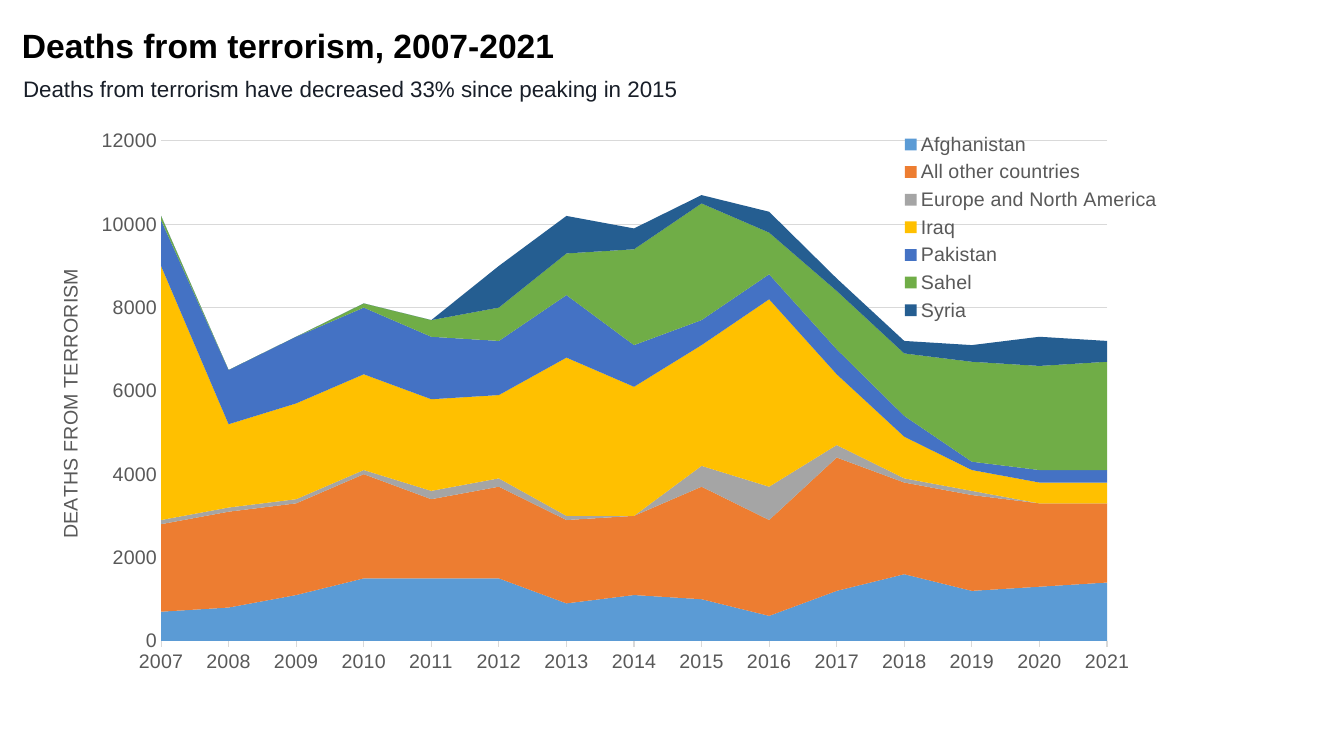
"""Build a slide with a stacked area chart of deaths from terrorism."""
from dataclasses import dataclass
from typing import Any

from lxml import etree
from pptx import Presentation
from pptx.chart.data import CategoryChartData
from pptx.dml.color import RGBColor
from pptx.enum.chart import XL_CHART_TYPE, XL_LEGEND_POSITION, XL_TICK_MARK
from pptx.oxml.ns import qn
from pptx.util import Emu, Pt

AREA_STACKED = XL_CHART_TYPE.AREA_STACKED
LEGEND_BOTTOM = XL_LEGEND_POSITION.BOTTOM
TICK_NONE = XL_TICK_MARK.NONE
TICK_OUTSIDE = XL_TICK_MARK.OUTSIDE

BLACK = RGBColor(0x00, 0x00, 0x00)
INK = RGBColor(0x18, 0x1E, 0x28)
GRAY = RGBColor(0x59, 0x59, 0x59)
LIGHT_GRAY = RGBColor(0xD9, 0xD9, 0xD9)
BLUE = RGBColor(0x5B, 0x9B, 0xD5)
ORANGE = RGBColor(0xED, 0x7D, 0x31)
SILVER = RGBColor(0xA5, 0xA5, 0xA5)
GOLD = RGBColor(0xFF, 0xC0, 0x00)
ROYAL_BLUE = RGBColor(0x44, 0x72, 0xC4)
GREEN = RGBColor(0x70, 0xAD, 0x47)
NAVY = RGBColor(0x25, 0x5E, 0x91)

EMU_PER_PX = 914400 / 100.8
CHART_FONT = {"name": "Arial", "size": Pt(14), "bold": False}


@dataclass(frozen=True)
class Heading:
    """A line of text with its box, in px, and its format."""

    text: str
    box: tuple[int, int, int, int]
    margins: tuple[int, int]
    line_spacing: float
    color: RGBColor
    font: dict[str, Any]


@dataclass(frozen=True)
class Region:
    """The deaths in a region by year, in hundreds."""

    name: str
    color: RGBColor
    hundreds: tuple[int, ...]


HEADINGS = (
    Heading("Deaths from terrorism, 2007-2021", (22, 29, 1088, 40), (0, 0), 0.9,
            BLACK, {"name": "Arial", "size": Pt(24), "bold": True}),
    Heading("Deaths from terrorism have decreased 33% since peaking in 2015",
            (13, 70, 999, 37), (10, 5), 1.0,
            INK, {"name": "Arial", "size": Pt(16), "bold": False}),
)
YEARS = range(2007, 2022)
REGIONS = (
    Region("Afghanistan", BLUE,
           (7, 8, 11, 15, 15, 15, 9, 11, 10, 6, 12, 16, 12, 13, 14)),
    Region("All other countries", ORANGE,
           (21, 23, 22, 25, 19, 22, 20, 19, 27, 23, 32, 22, 23, 20, 19)),
    Region("Europe and North America", SILVER,
           (1, 1, 1, 1, 2, 2, 1, 0, 5, 8, 3, 1, 1, 0, 0)),
    Region("Iraq", GOLD,
           (61, 20, 23, 23, 22, 20, 38, 31, 29, 45, 17, 10, 5, 5, 5)),
    Region("Pakistan", ROYAL_BLUE,
           (11, 13, 16, 16, 15, 13, 15, 10, 6, 6, 6, 5, 2, 3, 3)),
    Region("Sahel", GREEN,
           (1, 0, 0, 1, 4, 8, 10, 23, 28, 10, 14, 15, 24, 25, 26)),
    Region("Syria", NAVY,
           (0, 0, 0, 0, 0, 10, 9, 5, 2, 5, 3, 3, 4, 7, 5)),
)
CHART_BOX = (46, 123, 1139, 607)
PLOT_BOX = (115, 18, 946, 500)
LEGEND_BOX = (854, 5, 262, 199)
AXIS_TITLE_CORNER = (8, 142)


def px(length: int) -> Emu:
    """Turn px into EMU."""
    return Emu(round(length * EMU_PER_PX))


def set_attributes(target: Any, values: dict[str, Any]) -> None:
    """Set each named value on the target."""
    for name, value in values.items():
        setattr(target, name, value)


def style_font(font: Any, color: RGBColor, values: dict[str, Any]) -> None:
    """Apply a colour and format values to a font."""
    set_attributes(font, values)
    font.color.rgb = color


def style_line(line: Any) -> None:
    """Draw a thin light gray line."""
    line.color.rgb = LIGHT_GRAY
    line.width = Pt(0.75)


def place(parent: Any, index: int, box: tuple[int, ...], inner: bool = False) -> None:
    """Give a chart part a manual layout, in px inside the chart."""
    for old_layout in parent.findall(qn("c:layout")):
        parent.remove(old_layout)
    layout = etree.Element(qn("c:layout"))
    parent.insert(index, layout)
    manual = etree.SubElement(layout, qn("c:manualLayout"))
    values = {"layoutTarget": "inner"} if inner else {}
    values |= {"xMode": "edge", "yMode": "edge"}
    for name, length, total in zip("xywh", box, CHART_BOX[2:] * 2):
        values[name] = f"{length / total:.4f}"
    for name, value in values.items():
        etree.SubElement(manual, qn(f"c:{name}"), val=value)


def add_heading(slide: Any, heading: Heading) -> None:
    """Add a heading as a text box."""
    shape = slide.shapes.add_textbox(*map(px, heading.box))
    horizontal, vertical = map(px, heading.margins)
    set_attributes(shape.text_frame, {
        "word_wrap": True, "margin_left": horizontal, "margin_right": horizontal,
        "margin_top": vertical, "margin_bottom": vertical,
    })
    paragraph = shape.text_frame.paragraphs[0]
    paragraph.line_spacing = heading.line_spacing
    run = paragraph.add_run()
    run.text = heading.text
    style_font(run.font, heading.color, heading.font)


def style_axes(chart: Any) -> None:
    """Format both axes and the value axis title."""
    years, deaths = chart.category_axis, chart.value_axis
    for axis, tick in ((years, TICK_OUTSIDE), (deaths, TICK_NONE)):
        set_attributes(axis, {"major_tick_mark": tick, "minor_tick_mark": TICK_NONE})
        style_font(axis.tick_labels.font, GRAY, CHART_FONT)
    style_line(years.format.line)
    deaths.format.line.fill.background()
    set_attributes(deaths, {
        "minimum_scale": 0, "maximum_scale": 12000, "major_unit": 2000,
        "has_major_gridlines": True,
    })
    style_line(deaths.major_gridlines.format.line)
    set_attributes(deaths.tick_labels, {
        "number_format": "0", "number_format_is_linked": False,
    })
    run = deaths.axis_title.text_frame.paragraphs[0].add_run()
    run.text = "DEATHS FROM TERRORISM"
    style_font(run.font, GRAY, CHART_FONT)


def add_deaths_chart(slide: Any) -> None:
    """Add the stacked area chart with its legend."""
    data = CategoryChartData(number_format="0")
    data.categories = [str(year) for year in YEARS]
    for region in REGIONS:
        data.add_series(region.name, [100 * count for count in region.hundreds])
    chart = slide.shapes.add_chart(AREA_STACKED, *map(px, CHART_BOX), data).chart
    style_font(chart.font, BLACK, {"name": "Calibri", "size": Pt(10)})
    set_attributes(chart, {"has_title": False, "has_legend": True})
    chart.plots[0].vary_by_categories = False
    for series, region in zip(chart.plots[0].series, REGIONS):
        series.format.fill.solid()
        series.format.fill.fore_color.rgb = region.color
        series.format.line.fill.background()
    style_axes(chart)
    set_attributes(chart.legend, {"position": LEGEND_BOTTOM, "include_in_layout": True})
    style_font(chart.legend.font, GRAY, CHART_FONT)

    root = chart.element if hasattr(chart, "element") else chart._chartSpace
    root.find(f".//{qn('c:valAx')}/{qn('c:crossBetween')}").set("val", "midCat")
    title = root.find(f".//{qn('c:valAx')}/{qn('c:title')}")
    body = title.find(f".//{qn('a:bodyPr')}")
    body.set("rot", "-5400000")
    body.set("vert", "horz")
    place(root.find(f".//{qn('c:plotArea')}"), 0, PLOT_BOX, inner=True)
    place(root.find(f".//{qn('c:legend')}"), 1, LEGEND_BOX)
    place(title, 1, AXIS_TITLE_CORNER)


def main() -> None:
    """Build and save the presentation."""
    presentation = Presentation()
    presentation.slide_width, presentation.slide_height = px(1344), px(756)
    slide = presentation.slides.add_slide(presentation.slide_layouts[6])
    for heading in HEADINGS:
        add_heading(slide, heading)
    add_deaths_chart(slide)
    presentation.save("out.pptx")


if __name__ == "__main__":
    main()
